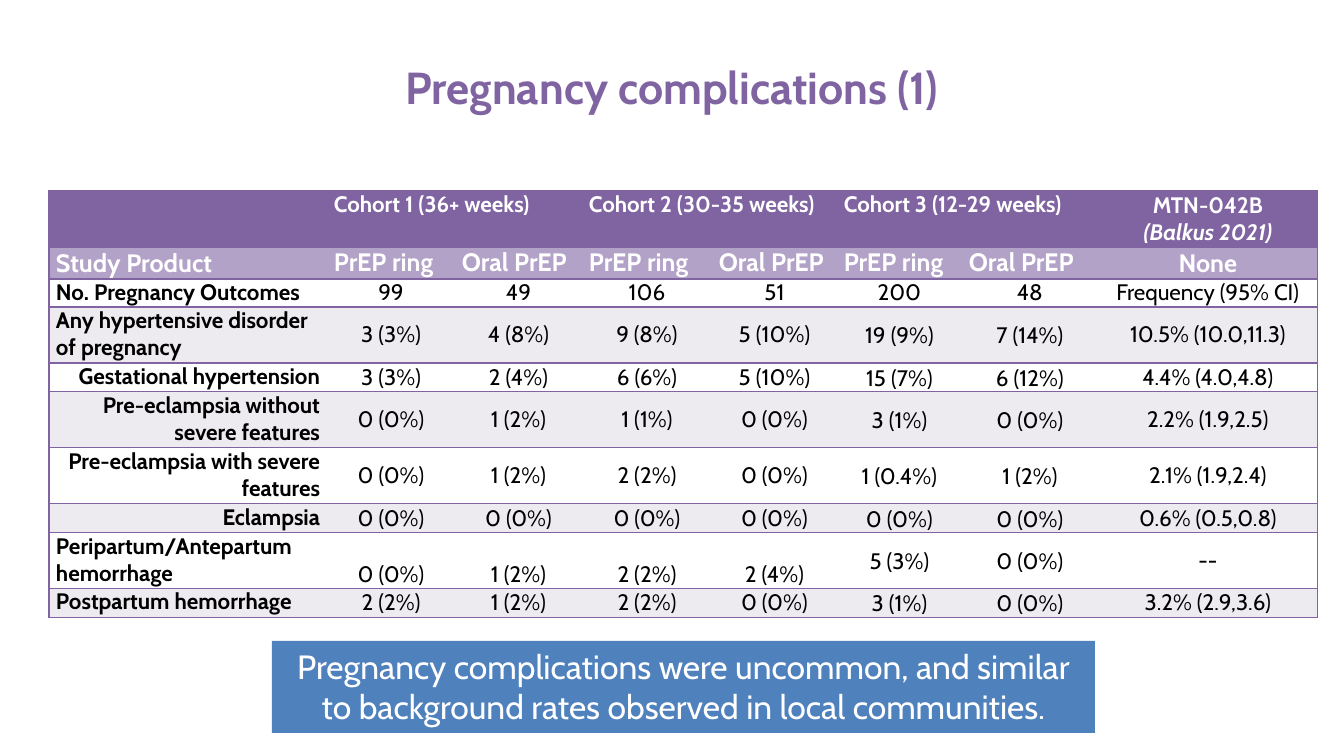
from lxml.etree import SubElement
from pptx import Presentation
from pptx.dml.color import RGBColor
from pptx.enum.shapes import MSO_SHAPE as Shape
from pptx.enum.text import MSO_ANCHOR as Anchor, PP_ALIGN as Align
from pptx.oxml.ns import qn
from pptx.util import Pt

PURPLE = RGBColor(0x80, 0x64, 0xA2)
LILAC = RGBColor(0xB3, 0xA2, 0xC7)
PALE = RGBColor(0xED, 0xEA, 0xF0)
BLUE = RGBColor(0x4F, 0x81, 0xBD)
WHITE = RGBColor(0xFF, 0xFF, 0xFF)
BLACK = RGBColor(0x00, 0x00, 0x00)

COLUMN_WIDTHS = [278, 128, 127, 130, 125, 125, 136, 220]
ROW_HEIGHTS = [56, 32, 28, 56, 28, 56, 56, 28, 56, 28]
COMPLICATIONS = [
    ["", "Cohort 1 (36+ weeks)", "", "Cohort 2 (30-35 weeks)", "",
     "Cohort 3 (12-29 weeks)", "", "MTN-042B\n(Balkus 2021)"],
    ["Study Product"] + ["PrEP ring", "Oral PrEP"] * 3 + ["None"],
    ["No. Pregnancy Outcomes", "99", "49", "106", "51", "200", "48", "Frequency (95% CI)"],
    ["Any hypertensive disorder of pregnancy", "3 (3%)", "4 (8%)", "9 (8%)", "5 (10%)",
     "19 (9%)", "7 (14%)", "10.5% (10.0,11.3)"],
    ["Gestational hypertension", "3 (3%)", "2 (4%)", "6 (6%)", "5 (10%)",
     "15 (7%)", "6 (12%)", "4.4% (4.0,4.8)"],
    ["Pre-eclampsia without severe features", "0 (0%)", "1 (2%)", "1 (1%)", "0 (0%)",
     "3 (1%)", "0 (0%)", "2.2% (1.9,2.5)"],
    ["Pre-eclampsia with severe features", "0 (0%)", "1 (2%)", "2 (2%)", "0 (0%)",
     "1 (0.4%)", "1 (2%)", "2.1% (1.9,2.4)"],
    ["Eclampsia"] + ["0 (0%)"] * 6 + ["0.6% (0.5,0.8)"],
    ["Peripartum/Antepartum hemorrhage", "0 (0%)", "1 (2%)", "2 (2%)", "2 (4%)",
     "5 (3%)", "0 (0%)", "--"],
    ["Postpartum hemorrhage", "2 (2%)", "1 (2%)", "2 (2%)", "0 (0%)",
     "3 (1%)", "0 (0%)", "3.2% (2.9,3.6)"],
]
COHORT_COLUMNS = (1, 3, 5)
COHORT_3 = (5, 6)
OUTCOMES_ROW = 2
HYPERTENSIVE_SUBTYPES = range(4, 8)
PERIPARTUM_ROW = 8
LAST_COLUMN = len(COLUMN_WIDTHS) - 1


class ComplicationsSlide:
    """Draws styled elements on one slide, measured in px."""

    font_name = "Cabin"

    def __init__(self, presentation):
        self.slide = presentation.slides.add_slide(presentation.slide_layouts[6])

    @staticmethod
    def px(length):
        return round(length * 914400 / 100.8)

    def box(self, *lengths):
        return [self.px(length) for length in lengths]

    def set_text(self, frame, text, size, color, bold=False, align=Align.CENTER):
        frame.text = text
        frame.word_wrap = True
        for paragraph in frame.paragraphs:
            paragraph.alignment = align
            font = paragraph.font
            font.name, font.size, font.bold = self.font_name, Pt(size), bold
            font.color.rgb = color

    def title(self, text, *bounds):
        frame = self.slide.shapes.add_textbox(*self.box(*bounds)).text_frame
        self.set_text(frame, text, 32, PURPLE, bold=True)
        frame.vertical_anchor = Anchor.MIDDLE
        frame.paragraphs[0].line_spacing = Pt(28.5)

    def banner(self, text, *bounds):
        banner = self.slide.shapes.add_shape(Shape.RECTANGLE, *self.box(*bounds))
        banner.shadow.inherit = False
        banner.fill.solid()
        banner.fill.fore_color.rgb = BLUE
        banner.line.fill.background()
        self.set_text(banner.text_frame, text, 24, WHITE)
        banner.text_frame.vertical_anchor = Anchor.TOP

    def borders(self, cell, column):
        properties = cell._tc.get_or_add_tcPr()
        drawn = {"L": column == 0, "R": column == LAST_COLUMN, "T": True, "B": True}
        for side, visible in drawn.items():
            line = SubElement(properties, qn(f"a:ln{side}"), w=str(Pt(1)))
            if visible:
                fill = SubElement(line, qn("a:solidFill"))
                SubElement(fill, qn("a:srgbClr"), val=str(PURPLE))
            else:
                SubElement(line, qn("a:noFill"))

    def cell(self, cell, text, row, column):
        heading = row < OUTCOMES_ROW
        label = column == 0
        if label and row in HYPERTENSIVE_SUBTYPES:
            align = Align.RIGHT
        elif label or heading and column < LAST_COLUMN:
            align = Align.LEFT
        else:
            align = Align.CENTER
        if label:
            anchor = Anchor.MIDDLE if row in (1, OUTCOMES_ROW) else Anchor.TOP
        elif row <= OUTCOMES_ROW and column < LAST_COLUMN:
            anchor = Anchor.TOP
        elif row == PERIPARTUM_ROW and column < COHORT_3[0]:
            anchor = Anchor.BOTTOM
        else:
            anchor = Anchor.MIDDLE

        self.borders(cell, column)
        cell.fill.solid()
        cell.fill.fore_color.rgb = (PURPLE, LILAC)[row] if heading else (WHITE, PALE)[row % 2]
        cell.margin_left = cell.margin_right = self.px(7)
        cell.margin_top = cell.margin_bottom = 0
        self.set_text(cell.text_frame, text, 18 if row == 1 else 16,
                      WHITE if heading else BLACK, heading or label, align)
        cell.vertical_anchor = anchor
        if column in COHORT_3 and row > OUTCOMES_ROW:
            percentage = cell.text_frame.paragraphs[0]
            percentage.line_spacing, percentage.space_after = 1.07, Pt(8)

    def table(self, rows, left, top):
        bounds = self.box(left, top, sum(COLUMN_WIDTHS), sum(ROW_HEIGHTS))
        table = self.slide.shapes.add_table(len(rows), len(COLUMN_WIDTHS), *bounds).table
        table.first_row = table.horz_banding = False
        for column, width in zip(table.columns, COLUMN_WIDTHS):
            column.width = self.px(width)
        for row, height in zip(table.rows, ROW_HEIGHTS):
            row.height = self.px(height)
        for row, texts in enumerate(rows):
            for column, text in enumerate(texts):
                self.cell(table.cell(row, column), text, row, column)
        for column in COHORT_COLUMNS:
            table.cell(0, column).merge(table.cell(0, column + 1))
        citation = table.cell(0, LAST_COLUMN).text_frame.paragraphs[1]
        citation.font.italic = True


def main():
    presentation = Presentation()
    presentation.slide_width = ComplicationsSlide.px(1344)
    presentation.slide_height = ComplicationsSlide.px(756)
    slide = ComplicationsSlide(presentation)
    slide.title("Pregnancy complications (1)", 67, 31, 1210, 126)
    slide.table(COMPLICATIONS, 49, 191)
    slide.banner("Pregnancy complications were uncommon, and similar to background rates "
                 "observed in local communities.", 272, 641, 823, 92)
    presentation.save("out.pptx")


if __name__ == "__main__":
    main()
